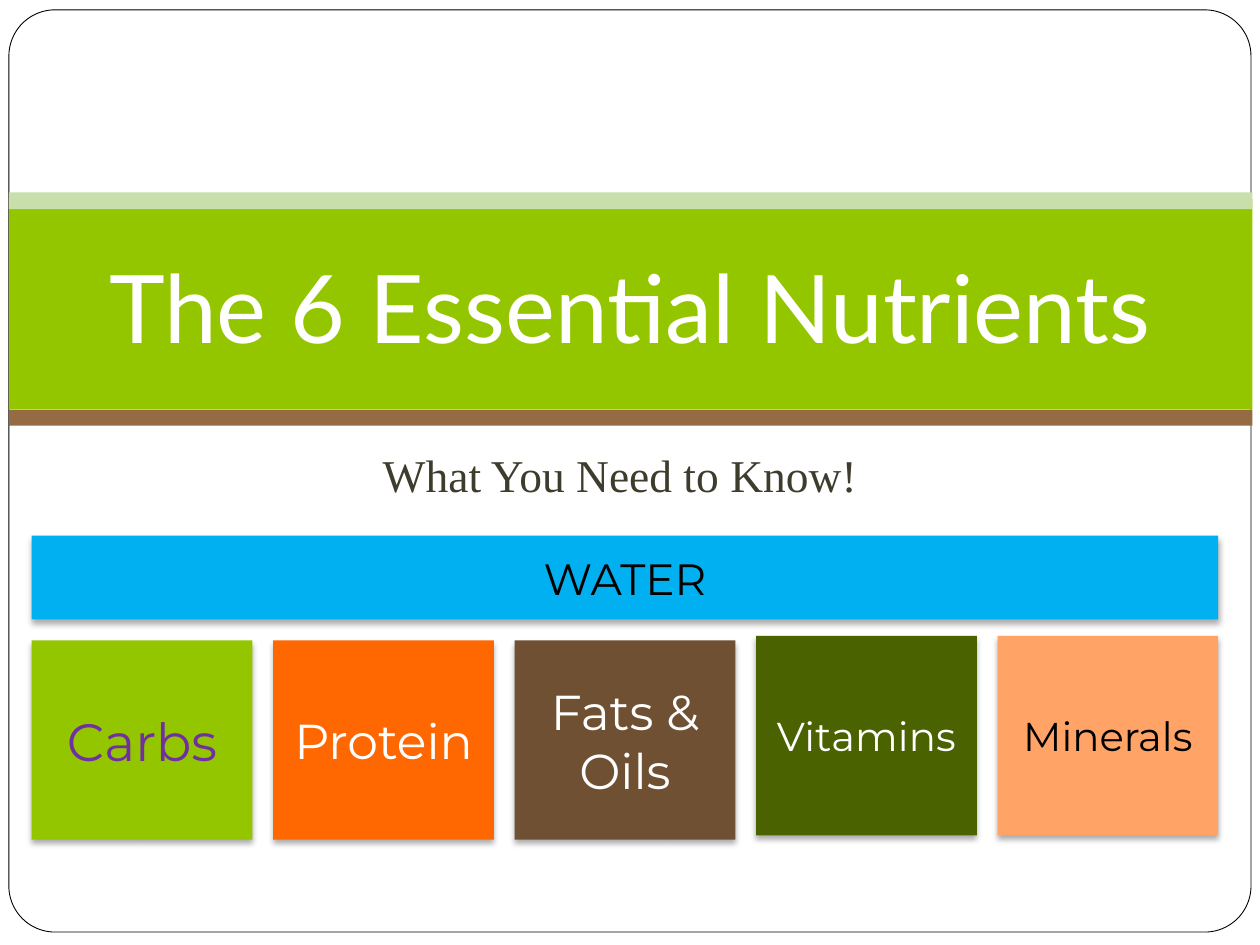
from lxml.etree import fromstring
from pptx import Presentation
from pptx.dml.color import RGBColor
from pptx.enum.shapes import MSO_SHAPE
from pptx.enum.text import MSO_ANCHOR, PP_ALIGN
from pptx.util import Cm, Pt

HUES = {
    "white": "FFFFFF", "black": "000000", "lime": "94C600", "pale": "C8DFAB",
    "tan": "956B43", "ink": "3E3D2D", "violet": "7030A0", "orange": "FF6700",
    "brown": "705032", "olive": "4A6300", "peach": "FFA466", "blue": "00B0F0",
}
BANDS = [("lime", 4.01, 4.25), ("pale", 3.88, 0.34), ("tan", 8.27, 0.31)]
TITLE = ("The 6 Essential Nutrients", 54, "Lato", "white")
MOTTO = ("What You Need to Know!", 26, "Times New Roman", "ink")
WATER = ("WATER", 25, "Montserrat", "black")
TILES = [
    ("Carbs", 30, "violet", "lime", 12.91),
    ("Protein", 28, "white", "orange", 12.91),
    ("Fats & Oils", 28, "white", "brown", 12.91),
    ("Vitamins", 23, "white", "olive", 12.82),
    ("Minerals", 23, "black", "peach", 12.82),
]
LEFT, SPAN, WIDE, HIGH = 0.64, 23.92, 4.45, 4.02
SHADOW = (
    '<a:effectLst xmlns:a="http://schemas.openxmlformats.org/drawingml/2006/main">'
    '<a:outerShdw blurRad="44450" dist="27940" dir="5400000" algn="ctr" rotWithShape="0">'
    '<a:srgbClr val="000000"><a:alpha val="32000"/></a:srgbClr>'
    '</a:outerShdw></a:effectLst>'
)


def hue(name):
    return RGBColor.from_string(HUES[name])


def draw(slide, box, fill, kind=MSO_SHAPE.RECTANGLE):
    shape = slide.shapes.add_shape(kind, *map(Cm, box))
    shape.shadow.inherit = False
    shape.fill.solid()
    shape.fill.fore_color.rgb = hue(fill)
    shape.line.fill.background()
    return shape


def write(shape, words, size, font, ink, anchor=MSO_ANCHOR.MIDDLE):
    frame = shape.text_frame
    frame.word_wrap = True
    frame.vertical_anchor = anchor
    para = frame.paragraphs[0]
    para.alignment = PP_ALIGN.CENTER
    run = para.add_run()
    run.text = words
    run.font.size = Pt(size)
    run.font.name = font
    run.font.color.rgb = hue(ink)
    return frame


def block(slide, box, fill, text):
    shape = draw(slide, box, fill)
    props = shape._element.spPr
    props.remove(props.find("{*}effectLst"))
    props.append(fromstring(SHADOW))
    write(shape, *text)


def main():
    deck = Presentation()
    deck.slide_width, deck.slide_height = Cm(25.4), Cm(19.05)
    slide = deck.slides.add_slide(deck.slide_layouts[6])

    frame = draw(slide, (0.18, 0.2, 25.04, 18.59), "white", MSO_SHAPE.ROUNDED_RECTANGLE)
    frame.adjustments[0] = 0.05
    frame.line.color.rgb = hue("black")
    frame.line.width = Pt(0.5)
    for fill, top, high in BANDS:
        draw(slide, (0.18, top, 25.07, high), fill)

    motto = slide.shapes.add_textbox(Cm(3.61), Cm(8.89), Cm(17.78), Cm(4.45))
    text = write(motto, *MOTTO, MSO_ANCHOR.TOP)
    text.paragraphs[0].space_before = Pt(5.8)
    title = slide.shapes.add_textbox(Cm(1.27), Cm(4.19), Cm(22.86), Cm(4.09))
    write(title, *TITLE).margin_bottom = Cm(0.25)

    step = (SPAN - WIDE) / (len(TILES) - 1)
    for i, (words, size, ink, fill, top) in enumerate(TILES):
        box = (LEFT + i * step, top, WIDE, HIGH)
        block(slide, box, fill, (words, size, "Montserrat", ink))
    block(slide, (LEFT, 10.8, SPAN, 1.69), "blue", WATER)
    deck.save("out.pptx")


if __name__ == "__main__":
    main()
